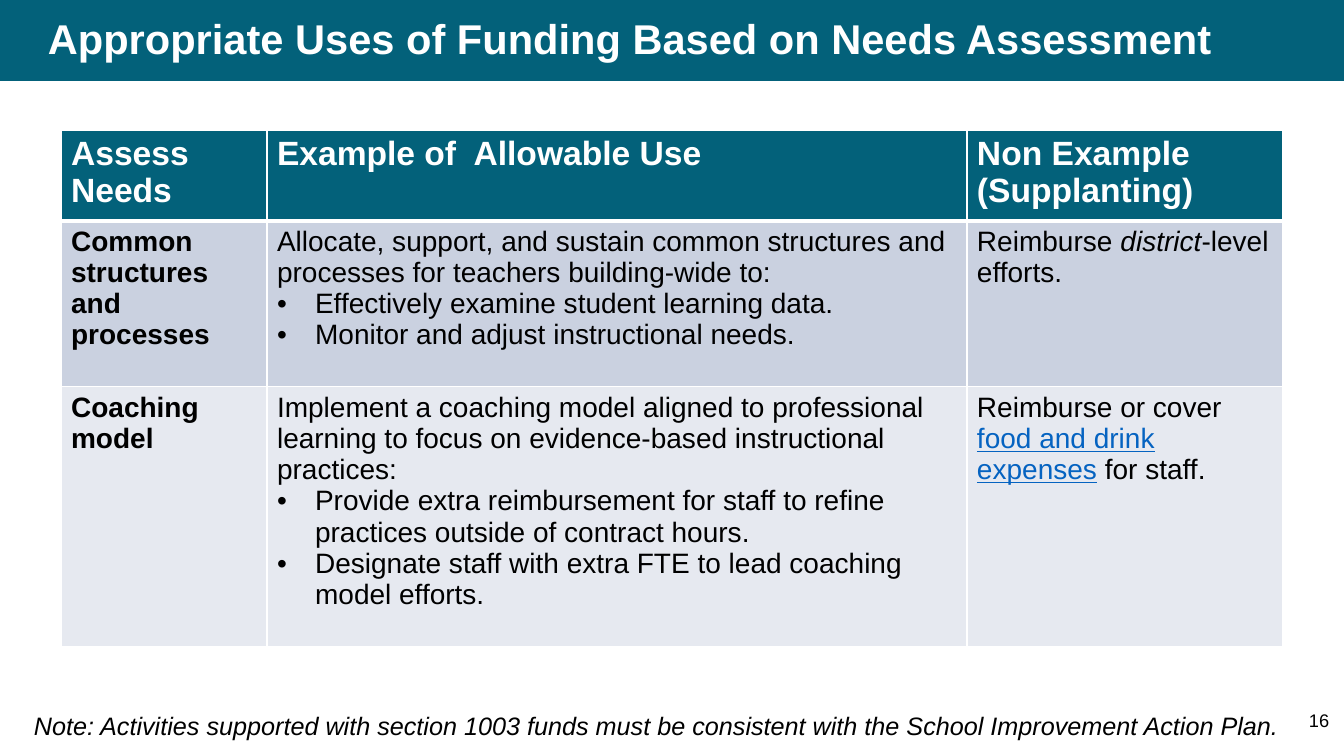
from lxml import etree
from pptx import Presentation
from pptx.dml.color import RGBColor
from pptx.enum.shapes import MSO_SHAPE
from pptx.enum.text import MSO_ANCHOR, PP_ALIGN
from pptx.oxml.ns import qn
from pptx.util import Pt

RECT = MSO_SHAPE.RECTANGLE
TOP, MIDDLE = MSO_ANCHOR.TOP, MSO_ANCHOR.MIDDLE
LEFT, RIGHT = PP_ALIGN.LEFT, PP_ALIGN.RIGHT

TEAL = RGBColor(0x03, 0x61, 0x7A)
WHITE = RGBColor(0xFF, 0xFF, 0xFF)
BLACK = RGBColor(0x00, 0x00, 0x00)
LINK = RGBColor(0x05, 0x63, 0xC1)
BAND_DARK = RGBColor(0xCA, 0xD1, 0xE0)
BAND_LIGHT = RGBColor(0xE6, 0xE9, 0xF0)

FONT = "Arial"
PX = 914400 / 100.8
INDENT = 38

TITLE = {"size": Pt(29.7), "bold": True, "color": WHITE}
HEADER = {"size": Pt(24), "bold": True, "color": WHITE}
NEED = {"size": Pt(20), "bold": True, "color": BLACK}
BODY = {"size": Pt(20), "bold": False, "color": BLACK}
NOTE = {"size": Pt(18), "italic": True, "color": BLACK}
NUMBER = {"size": Pt(13), "color": BLACK}

COLUMNS = [206, 700, 316]
ROWS = [84, 166, 260]
FILLS = [TEAL, BAND_DARK, BAND_LIGHT]
HEADINGS = ["Assess Needs", "Example of  Allowable Use", "Non Example (Supplanting)"]
NEEDS = [
    (
        "Common structures and processes",
        "Allocate, support, and sustain common structures and processes "
        "for teachers building-wide to:",
        ["Effectively examine student learning data.",
         "Monitor and adjust instructional needs."],
        [("Reimburse ", {}), ("district", {"italic": True}), ("-level efforts.", {})],
    ),
    (
        "Coaching model",
        "Implement a coaching model aligned to professional learning "
        "to focus on evidence-based instructional practices:",
        ["Provide extra reimbursement for staff to refine practices "
         "outside of contract hours.",
         "Designate staff with extra FTE to lead coaching model efforts."],
        [("Reimburse or cover ", {}),
         ("food and drink expenses", {"color": LINK, "underline": True}),
         (" for staff.", {})],
    ),
]


def px(n):
    return round(n * PX)


def add_run(p, text, fmt):
    r = p.add_run()
    r.text = text
    r.font.name = FONT
    for name, value in fmt.items():
        if name == "color":
            r.font.color.rgb = value
        else:
            setattr(r.font, name, value)


def add_bullet(tf, text, fmt):
    p = tf.add_paragraph()
    pPr = p._p.get_or_add_pPr()
    pPr.set("marL", str(px(INDENT)))
    pPr.set("indent", str(-px(INDENT)))
    etree.SubElement(pPr, qn("a:buFont"), typeface=FONT)
    etree.SubElement(pPr, qn("a:buChar"), char="•")
    add_run(p, text, fmt)


def add_bar(s, x, y, w, h, color):
    sp = s.shapes.add_shape(RECT, px(x), px(y), px(w), px(h))
    sp.shadow.inherit = False
    sp.fill.solid()
    sp.fill.fore_color.rgb = color
    sp.line.fill.background()


def add_text(s, x, y, w, h, text, fmt, anchor=TOP, align=LEFT, spacing=1.0, inset=5):
    sp = s.shapes.add_textbox(px(x), px(y), px(w), px(h))
    tf = sp.text_frame
    layout = {"word_wrap": True, "vertical_anchor": anchor,
              "margin_top": px(inset), "margin_bottom": px(inset)}
    for name, value in layout.items():
        setattr(tf, name, value)
    p = tf.paragraphs[0]
    p.alignment = align
    p.line_spacing = spacing
    add_run(p, text, fmt)


def set_borders(cell, widths):
    tcPr = cell._tc.get_or_add_tcPr()
    for side, width in widths.items():
        ln = etree.SubElement(tcPr, qn(f"a:ln{side}"), w=str(Pt(width)))
        fill = etree.SubElement(ln, qn("a:solidFill"))
        etree.SubElement(fill, qn("a:srgbClr"), val=str(WHITE))


def add_needs_table(s, x, y):
    frame = s.shapes.add_table(len(ROWS), len(COLUMNS), px(x), px(y),
                               px(sum(COLUMNS)), px(sum(ROWS)))
    table = frame.table
    for column, width in zip(table.columns, COLUMNS):
        column.width = px(width)
    for i, (row, height) in enumerate(zip(table.rows, ROWS)):
        row.height = px(height)
        for cell in row.cells:
            set_borders(cell, {"L": 1, "R": 1, "T": 3 if i == 1 else 1,
                               "B": 3 if i == 0 else 1})
            cell.fill.solid()
            cell.fill.fore_color.rgb = FILLS[i]
    return table


def fill_needs_table(table):
    for j, heading in enumerate(HEADINGS):
        add_run(table.cell(0, j).text_frame.paragraphs[0], heading, HEADER)
    for i, (need, use, bullets, non_example) in enumerate(NEEDS, 1):
        need_tf, use_tf, non_tf = [cell.text_frame for cell in table.rows[i].cells]
        add_run(need_tf.paragraphs[0], need, NEED)
        add_run(use_tf.paragraphs[0], use, BODY)
        for bullet in bullets:
            add_bullet(use_tf, bullet, BODY)
        for text, extra in non_example:
            add_run(non_tf.paragraphs[0], text, {**BODY, **extra})


def main():
    prs = Presentation()
    prs.slide_width, prs.slide_height = px(1344), px(756)
    s = prs.slides.add_slide(prs.slide_layouts[6])
    add_bar(s, 0, 0, 1344, 81, TEAL)
    add_text(s, 38, 0, 1242, 81, "Appropriate Uses of Funding Based on Needs Assessment",
             TITLE, anchor=MIDDLE, spacing=0.9)
    fill_needs_table(add_needs_table(s, 61, 130))
    add_text(s, 24, 705, 1276, 41,
             "Note: Activities supported with section 1003 funds must be consistent "
             "with the School Improvement Action Plan.", NOTE)
    add_text(s, 1258, 699, 81, 57, "16", NUMBER, align=RIGHT, inset=10)
    prs.save("out.pptx")


if __name__ == "__main__":
    main()
